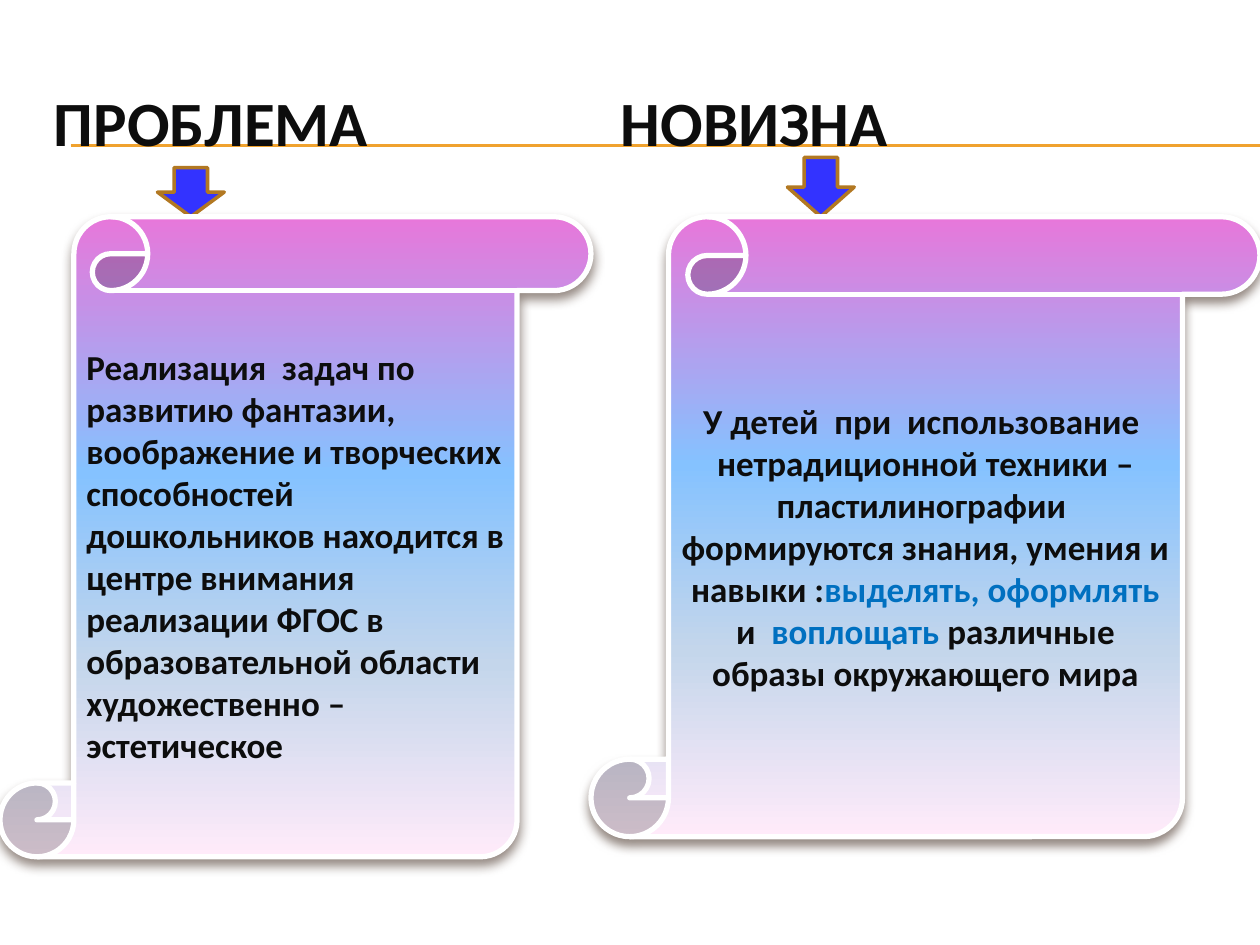
from lxml.etree import SubElement
from pptx import Presentation
from pptx.dml.color import RGBColor
from pptx.enum.shapes import MSO_CONNECTOR, MSO_SHAPE
from pptx.enum.text import MSO_ANCHOR, PP_ALIGN
from pptx.oxml.ns import qn
from pptx.util import Inches, Pt

INK = RGBColor(0x0D, 0x0D, 0x0D)
BLUE = RGBColor(0x00, 0x70, 0xC0)
GOLD = RGBColor(0xF0, 0xA2, 0x2E)
ARROW = RGBColor(0x33, 0x33, 0xFF)
EDGE = RGBColor(0xB2, 0x78, 0x22)
WHITE = RGBColor(0xFF, 0xFF, 0xFF)
SHADE = RGBColor(0x4E, 0x3B, 0x30)
STOPS = [
    (0, RGBColor(0xE7, 0x77, 0xDA)),
    (40, RGBColor(0x85, 0xC2, 0xFF)),
    (70, RGBColor(0xC4, 0xD6, 0xEB)),
    (100, RGBColor(0xFF, 0xEB, 0xFA)),
]

TITLE = [("ПРОБЛЕМА\tНОВИЗНА", INK)]
TITLE_BOX = (0.33, 0.5, 10.02, 0.92)
TITLE_TAB = 4.5
RULES = [1.15, 1.16]
TOP = 1.72  # arrows end and scrolls begin here
COLUMNS = [
    {
        "arrow": (1.25, 0.39),
        "scroll": (0, 4.69, 5.08),
        "align": PP_ALIGN.LEFT,
        "runs": [
            ("Реализация  задач по развитию фантазии, воображение и творческих "
             "способностей дошкольников находится в центре внимания реализации "
             "ФГОС в образовательной области художественно – эстетическое", INK),
        ],
    },
    {
        "arrow": (6.25, 0.47),
        "scroll": (4.69, 5.31, 4.92),
        "align": PP_ALIGN.CENTER,
        "runs": [
            ("У детей  при  использование  нетрадиционной техники – "
             "пластилинографии  формируются знания, умения и навыки :", INK),
            ("выделять, оформлять ", BLUE),
            ("и ", INK),
            (" воплощать ", BLUE),
            ("различные образы окружающего мира", INK),
        ],
    },
]


def put_text(shape, runs, size=20, align=PP_ALIGN.LEFT, tab=None):
    frame = shape.text_frame
    frame.word_wrap = True
    frame.vertical_anchor = MSO_ANCHOR.MIDDLE
    para = frame.paragraphs[0]
    para.alignment = align
    if tab:
        tabs = SubElement(para._p.get_or_add_pPr(), qn("a:tabLst"))
        SubElement(tabs, qn("a:tab"), pos=str(Inches(tab)), algn="l")
    for text, color in runs:
        run = para.add_run()
        run.text = text
        font = run.font
        font.name, font.size, font.bold = "Calibri", Pt(size), True
        font.color.rgb = color


def add_form(slide, kind, box, line, width):
    shape = slide.shapes.add_shape(kind, *map(Inches, box))
    shape.shadow.inherit = False
    shape.line.color.rgb = line
    shape.line.width = Pt(width)
    return shape


def add_color(parent, color):
    return SubElement(parent, qn("a:srgbClr"), val=str(color))


def fill_fade(shape):
    """Fill from top to bottom through all colour stops."""
    shape.fill.gradient()
    shape.fill.gradient_angle = 270
    stops = shape._element.spPr.find(".//" + qn("a:gsLst"))
    for old in list(stops):
        stops.remove(old)
    for place, color in STOPS:
        add_color(SubElement(stops, qn("a:gs"), pos=str(place * 1000)), color)


def drop_shadow(shape):
    effects = shape._element.spPr.find(qn("a:effectLst"))
    shadow = SubElement(effects, qn("a:outerShdw"), blurRad=str(Pt(6)),
                        dist=str(Pt(4)), dir="5400000", rotWithShape="0")
    SubElement(add_color(shadow, SHADE), qn("a:alpha"), val="60000")


def add_rule(slide, y):
    rule = slide.shapes.add_connector(
        MSO_CONNECTOR.STRAIGHT, Inches(0.56), Inches(y), Inches(10), Inches(y))
    rule.line.color.rgb = GOLD
    rule.line.width = Pt(0.75)
    SubElement(rule._element.spPr, qn("a:effectLst"))


def main():
    deck = Presentation()
    deck.slide_width, deck.slide_height = Inches(10), Inches(7.5)
    slide = deck.slides.add_slide(deck.slide_layouts[6])

    for y in RULES:
        add_rule(slide, y)
    title = slide.shapes.add_textbox(*map(Inches, TITLE_BOX))
    put_text(title, TITLE, size=36, tab=TITLE_TAB)

    for col in COLUMNS:
        left, height = col["arrow"]
        arrow = add_form(slide, MSO_SHAPE.DOWN_ARROW,
                         (left, TOP - height, 0.53, height), EDGE, 2)
        arrow.fill.solid()
        arrow.fill.fore_color.rgb = ARROW

    for col in COLUMNS:
        left, width, height = col["scroll"]
        scroll = add_form(slide, MSO_SHAPE.VERTICAL_SCROLL,
                          (left, TOP, width, height), WHITE, 3)
        fill_fade(scroll)
        drop_shadow(scroll)
        put_text(scroll, col["runs"], align=col["align"])

    deck.save("out.pptx")


if __name__ == "__main__":
    main()
